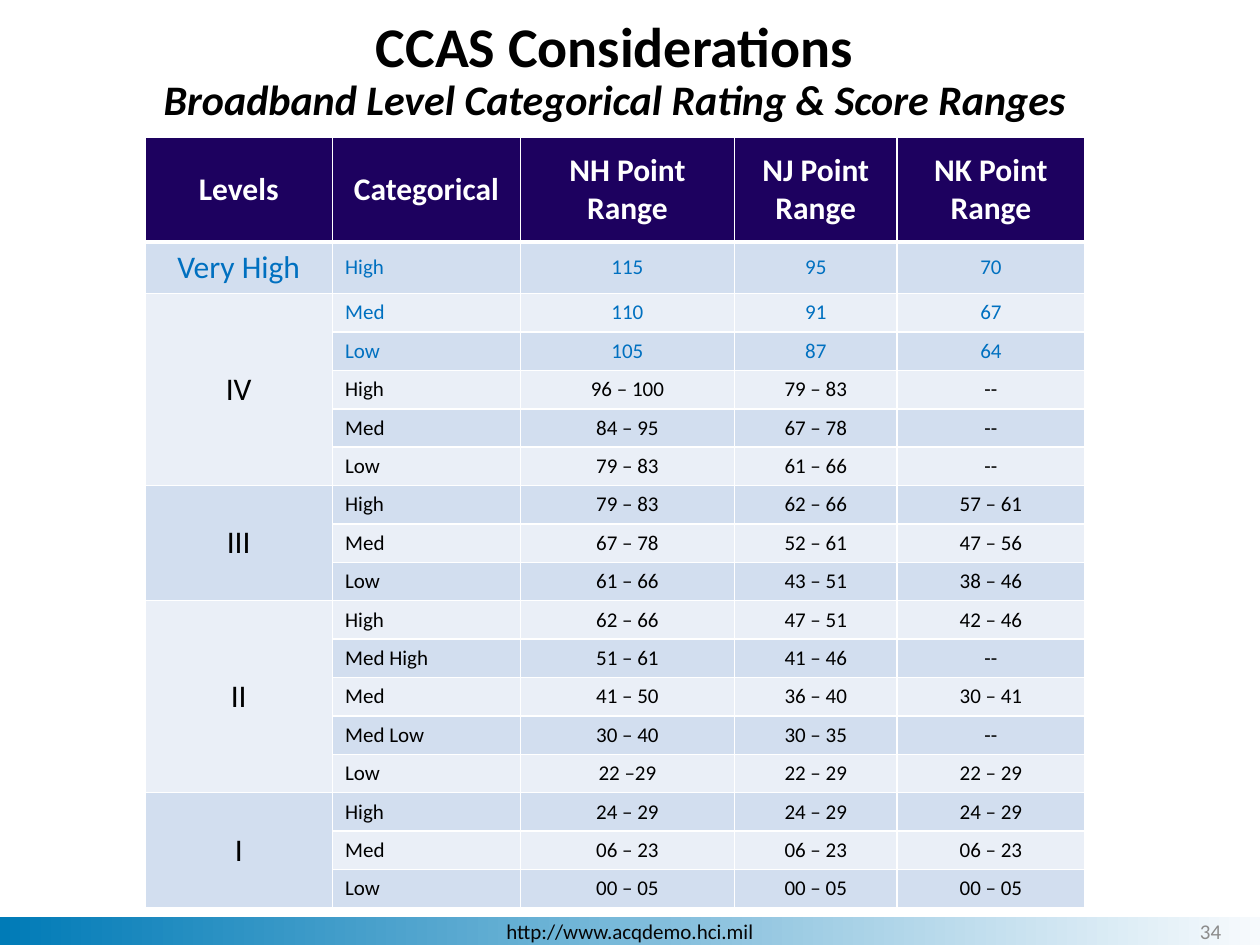
from lxml import etree
from pptx import Presentation
from pptx.dml.color import RGBColor
from pptx.enum.shapes import MSO_SHAPE
from pptx.enum.text import MSO_ANCHOR, PP_ALIGN
from pptx.oxml.ns import qn
from pptx.util import Inches, Pt

LEFT, CENTER, RIGHT = PP_ALIGN.LEFT, PP_ALIGN.CENTER, PP_ALIGN.RIGHT
MIDDLE, BOTTOM = MSO_ANCHOR.MIDDLE, MSO_ANCHOR.BOTTOM
RECTANGLE = MSO_SHAPE.RECTANGLE
TITLE_ONLY = 5

FONT = "Calibri"
COLORS = {
    "black": "000000",
    "white": "FFFFFF",
    "header": "1D015F",
    "dark_band": "D2DEEF",
    "light_band": "EAEFF7",
    "extra_points": "0070C0",
    "bar_left": "007BB7",
    "bar_right": "F7FAFD",
    "bar_text": "060606",
    "page_number": "8C8C8C",
}

COLUMN_WIDTHS = (1.49, 1.49, 1.7, 1.29, 1.49)
HEADER_HEIGHT = 0.83
VERY_HIGH_HEIGHT = 0.41
HEADINGS = ("Levels", "Categorical", "NH Point Range", "NJ Point Range", "NK Point Range")
EXTRA_POINT_ROWS = 3
LEVELS = [
    ("Very High", [("High", "115", "95", "70")]),
    ("IV", [
        ("Med", "110", "91", "67"),
        ("Low", "105", "87", "64"),
        ("High", "96 – 100", "79 – 83", "--"),
        ("Med", "84 – 95", "67 – 78", "--"),
        ("Low", "79 – 83", "61 – 66", "--"),
    ]),
    ("III", [
        ("High", "79 – 83", "62 – 66", "57 – 61"),
        ("Med", "67 – 78", "52 – 61", "47 – 56"),
        ("Low", "61 – 66", "43 – 51", "38 – 46"),
    ]),
    ("II", [
        ("High", "62 – 66", "47 – 51", "42 – 46"),
        ("Med High", "51 – 61", "41 – 46", "--"),
        ("Med", "41 – 50", "36 – 40", "30 – 41"),
        ("Med Low", "30 – 40", "30 – 35", "--"),
        ("Low", "22 –29", "22 – 29", "22 – 29"),
    ]),
    ("I", [
        ("High", "24 – 29", "24 – 29", "24 – 29"),
        ("Med", "06 – 23", "06 – 23", "06 – 23"),
        ("Low", "00 – 05", "00 – 05", "00 – 05"),
    ]),
]


def rgb(name):
    return RGBColor.from_string(COLORS[name])


def add_run(paragraph, text, size, color, align=CENTER, bold=False, italic=False):
    paragraph.alignment = align
    run = paragraph.add_run()
    run.text = text
    font = run.font
    font.name, font.size, font.bold, font.italic = FONT, Pt(size), bold, italic
    font.color.rgb = rgb(color)


def add_footer_bar(slide, left, top, width, height):
    bar = slide.shapes.add_shape(
        RECTANGLE, Inches(left), Inches(top), Inches(width), Inches(height))
    bar.shadow.inherit = False
    bar.line.fill.background()
    bar.fill.gradient()
    bar.fill.gradient_angle = 180
    for stop, color in zip(bar.fill.gradient_stops, ("bar_right", "bar_left")):
        stop.color.rgb = rgb(color)
    frame = bar.text_frame
    frame.vertical_anchor = MIDDLE
    add_run(frame.paragraphs[0], "http://www.acqdemo.hci.mil", 12, "bar_text")


def set_borders(cell, top=1, bottom=1):
    """Draw white borders, with widths in points."""
    properties = cell._tc.get_or_add_tcPr()
    for side, width in (("L", 1), ("R", 1), ("T", top), ("B", bottom)):
        line = etree.SubElement(properties, qn(f"a:ln{side}"), w=str(Pt(width)))
        fill = etree.SubElement(line, qn("a:solidFill"))
        etree.SubElement(fill, qn("a:srgbClr"), val=COLORS["white"])


def fill_cell(cell, text, size, color, align=CENTER, bold=False):
    cell.vertical_anchor = MIDDLE
    add_run(cell.text_frame.paragraphs[0], text, size, color, align, bold)


def style_grid(table):
    """Give every cell its band colour and borders."""
    for index, row in enumerate(table.rows):
        band = "dark_band" if index % 2 else "light_band"
        for cell in row.cells:
            set_borders(cell, top=3 if index == 1 else 1, bottom=3 if index == 0 else 1)
            cell.fill.solid()
            cell.fill.fore_color.rgb = rgb("header" if index == 0 else band)


def add_score_table(slide, left, top, width, height):
    row_count = 1 + sum(len(rows) for _, rows in LEVELS)
    table = slide.shapes.add_table(
        row_count, len(HEADINGS),
        Inches(left), Inches(top), Inches(width), Inches(height)).table
    for column, column_width in zip(table.columns, COLUMN_WIDTHS):
        column.width = Inches(column_width)
    row_height = (height - HEADER_HEIGHT - VERY_HIGH_HEIGHT) / (row_count - 2)
    heights = [HEADER_HEIGHT, VERY_HIGH_HEIGHT] + [row_height] * (row_count - 2)
    for row, value in zip(table.rows, heights):
        row.height = Inches(value)
    style_grid(table)

    for column, heading in enumerate(HEADINGS):
        fill_cell(table.cell(0, column), heading, 18, "white", bold=True)
    first = 1
    for level, rows in LEVELS:
        level_cell = table.cell(first, 0)
        if len(rows) > 1:
            level_cell.merge(table.cell(first + len(rows) - 1, 0))
        fill_cell(level_cell, level, 18, "extra_points" if level == "Very High" else "black")
        for row, values in enumerate(rows, first):
            color = "extra_points" if row <= EXTRA_POINT_ROWS else "black"
            for column, value in enumerate(values, 1):
                fill_cell(table.cell(row, column), value, 12, color,
                          LEFT if column == 1 else CENTER)
        first += len(rows)


def place_title(slide, left, top, width, height):
    title = slide.shapes.title
    title.left, title.top = Inches(left), Inches(top)
    title.width, title.height = Inches(width), Inches(height)
    frame = title.text_frame
    frame.vertical_anchor = MIDDLE
    frame.margin_top = frame.margin_bottom = 0
    heading, subheading = frame.paragraphs[0], frame.add_paragraph()
    add_run(heading, "CCAS Considerations", 32, "black", bold=True)
    add_run(subheading, "Broadband Level Categorical Rating & Score Ranges",
            24, "black", bold=True, italic=True)
    for paragraph in (heading, subheading):
        paragraph.line_spacing = 0.9
        paragraph.space_before = Pt(0)


def add_page_number(slide, left, top, width, height):
    box = slide.shapes.add_textbox(
        Inches(left), Inches(top), Inches(width), Inches(height))
    frame = box.text_frame
    frame.word_wrap = True
    frame.vertical_anchor = BOTTOM
    add_run(frame.paragraphs[0], "34", 12, "page_number", RIGHT)


def main():
    presentation = Presentation()
    presentation.slide_width, presentation.slide_height = Inches(10), Inches(7.5)
    slide = presentation.slides.add_slide(presentation.slide_layouts[TITLE_ONLY])
    add_footer_bar(slide, 0, 7.28, 10, 0.22)
    add_score_table(slide, 1.15, 1.09, sum(COLUMN_WIDTHS), 6.12)
    place_title(slide, 0.93, 0.14, 7.9, 0.86)
    add_page_number(slide, 7.54, 7.14, 2.25, 0.4)
    presentation.save("out.pptx")


if __name__ == "__main__":
    main()
